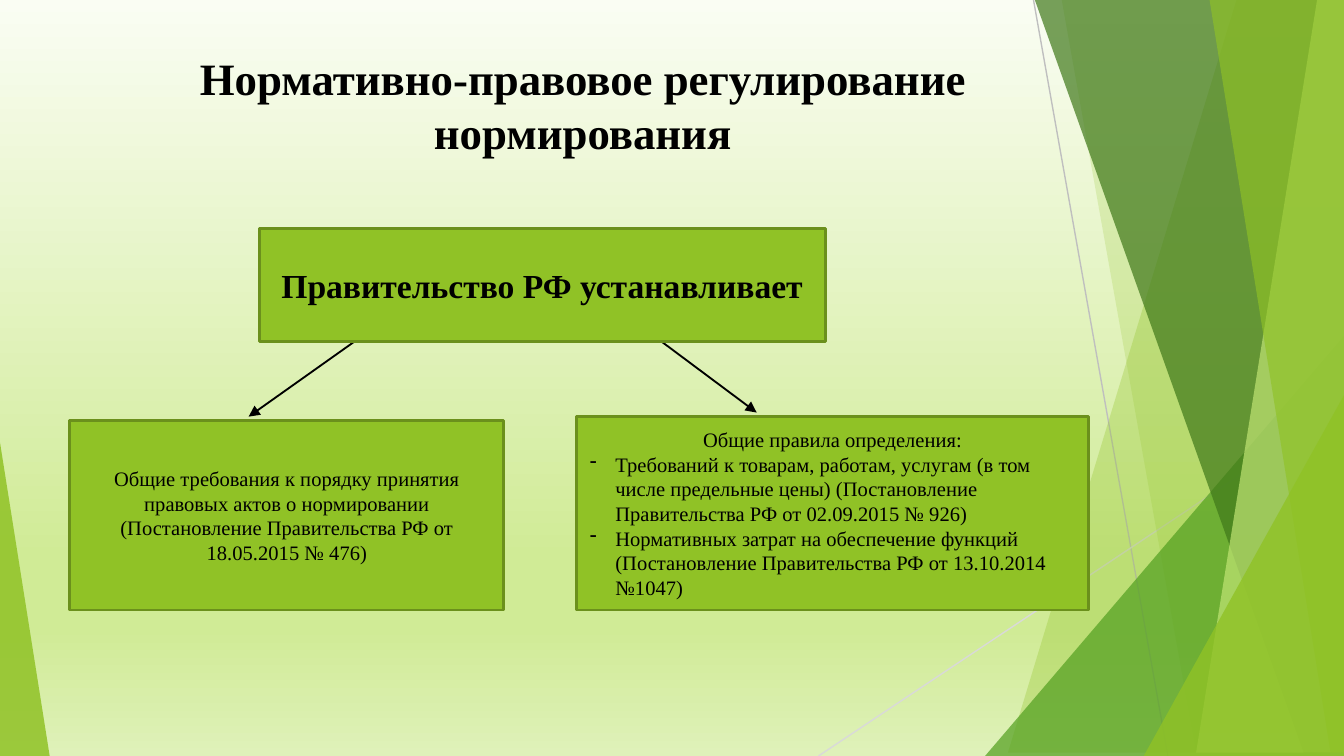
from lxml import etree
from pptx import Presentation
from pptx.dml.color import RGBColor
from pptx.enum.shapes import MSO_CONNECTOR, MSO_SHAPE
from pptx.enum.text import MSO_ANCHOR, PP_ALIGN
from pptx.oxml.ns import qn
from pptx.util import Inches, Pt

# Grid of square cells: 100 columns by 56.25 rows
COLS, ROWS = 100, 56.25
CELL = Inches(0.1)
FONT = "Times New Roman"
GREEN = "90C226"

prs = Presentation()
prs.slide_width, prs.slide_height = int(COLS * CELL), int(ROWS * CELL)
s = prs.slides.add_slide(prs.slide_layouts[6])


def paint(fill, color, alpha=100):
    fill.solid()
    fill.fore_color.rgb = RGBColor.from_string(color)
    if alpha < 100:
        clr = fill._xPr.find(".//" + qn("a:srgbClr"))
        etree.SubElement(clr, qn("a:alpha"), val=str(alpha * 1000))


def cells(*values):
    return [int(v * CELL) for v in values]


# Background gradient, top to bottom
bg = s.background.fill
bg.gradient()
bg.gradient_angle = 270
stops = s.element.find(".//" + qn("a:gsLst"))
for gs in list(stops):
    stops.remove(gs)
for pos, color in [(0, "FAFDF3"), (74, "D0EB96"), (83, "D0EB96"), (100, "DFF1B9")]:
    gs = etree.SubElement(stops, qn("a:gs"), pos=str(pos * 1000))
    etree.SubElement(gs, qn("a:srgbClr"), val=color)

# Lines: two thin decorative ones, then two arrows from the head box
lines = [
    (76.9, 0, 86.9, ROWS, "BFBFBF", 0.75, False),
    (COLS, 30.2, 60.9, ROWS, "D9D9D9", 0.75, False),
    (26.4, 25.4, 18.5, 31, "000000", 1, True),
    (49.2, 25.4, 56.3, 30.7, "000000", 1, True),
]
for x1, y1, x2, y2, color, width, arrow in lines:
    c = s.shapes.add_connector(MSO_CONNECTOR.STRAIGHT, *cells(x1, y1, x2, y2))
    paint(c.line.fill, color)
    c.line.width = Pt(width)
    if arrow:
        etree.SubElement(c.line._get_or_add_ln(), qn("a:tailEnd"), type="triangle")
    etree.SubElement(c._element.spPr, qn("a:effectLst"))

# Facets on the sides: a band runs from its top edge to its bottom edge,
# a triangle has its apex at the left (0) or right (1) end of its box
BAND, TRIANGLE = "band", "triangle"
facets = [
    (BAND, (92.1, 75.3), GREEN, 30),
    (BAND, (78.8, 88.7), GREEN, 20),
    (TRIANGLE, (73.3, 25, 26.7, 1), "54A021", 72),
    (BAND, (76.6, 96.8), "3F7819", 70),
    (BAND, (97.8, 89.4), "C0E474", 70),
    (BAND, (89.7, 98.8), GREEN, 65),
    (TRIANGLE, (85.1, 29.4, 14.9, 1), GREEN, 80),
    (TRIANGLE, (0, 32.9, 3.7, 0), GREEN, 85),
]
for kind, place, color, alpha in facets:
    if kind == BAND:
        top, bottom = place
        fb = s.shapes.build_freeform(top, 0, scale=CELL)
        fb.add_line_segments([(COLS, 0), (COLS, ROWS), (bottom, ROWS)])
        sp = fb.convert_to_shape()
    else:
        left, top, width, apex = place
        sp = s.shapes.add_shape(MSO_SHAPE.ISOSCELES_TRIANGLE,
                                *cells(left, top, width, ROWS - top))
        sp.adjustments[0] = apex
    sp.shadow.inherit = False
    paint(sp.fill, color, alpha)
    sp.line.fill.background()

# Title and boxes: place, filled, size, bold, paragraphs (text, bulleted)
blocks = [
    ((7.5, 2.9, 71.7, 9.8), False, 24, True,
     [("Нормативно-правовое регулирование нормирования", False)]),
    ((19.3, 17, 42.1, 8.4), True, 18, True,
     [("Правительство РФ устанавливает", False)]),
    ((5.2, 31.3, 32.3, 14.1), True, 11, False,
     [("Общие требования к порядку принятия правовых актов о нормировании "
       "(Постановление Правительства РФ от 18.05.2015 № 476)", False)]),
    ((42.9, 31, 38.1, 14.4), True, 11, False,
     [("Общие правила определения:", False),
      ("Требований к товарам, работам, услугам (в том числе предельные цены) "
       "(Постановление Правительства РФ от 02.09.2015 № 926)", True),
      ("Нормативных затрат на обеспечение функций "
       "(Постановление Правительства РФ от 13.10.2014 №1047)", True)]),
]
for place, filled, size, bold, paragraphs in blocks:
    if filled:
        sp = s.shapes.add_shape(MSO_SHAPE.RECTANGLE, *cells(*place))
        sp.shadow.inherit = False
        paint(sp.fill, GREEN)
        paint(sp.line.fill, "6B901C")
        sp.line.width = Pt(1.5)
    else:
        sp = s.shapes.add_textbox(*cells(*place))
    tf = sp.text_frame
    tf.word_wrap = True
    tf.vertical_anchor = MSO_ANCHOR.MIDDLE
    for i, (text, bulleted) in enumerate(paragraphs):
        p = tf.add_paragraph() if i else tf.paragraphs[0]
        p.alignment = PP_ALIGN.LEFT if bulleted else PP_ALIGN.CENTER
        if bulleted:
            indent = int(1.9 * CELL)
            pPr = p._p.get_or_add_pPr()
            pPr.set("marL", str(indent))
            pPr.set("indent", str(-indent))
            etree.SubElement(pPr, qn("a:buChar"), char="-")
        r = p.add_run()
        r.text = text
        r.font.name, r.font.size, r.font.bold = FONT, Pt(size), bold
        paint(r.font.fill, "000000")

prs.save("out.pptx")
